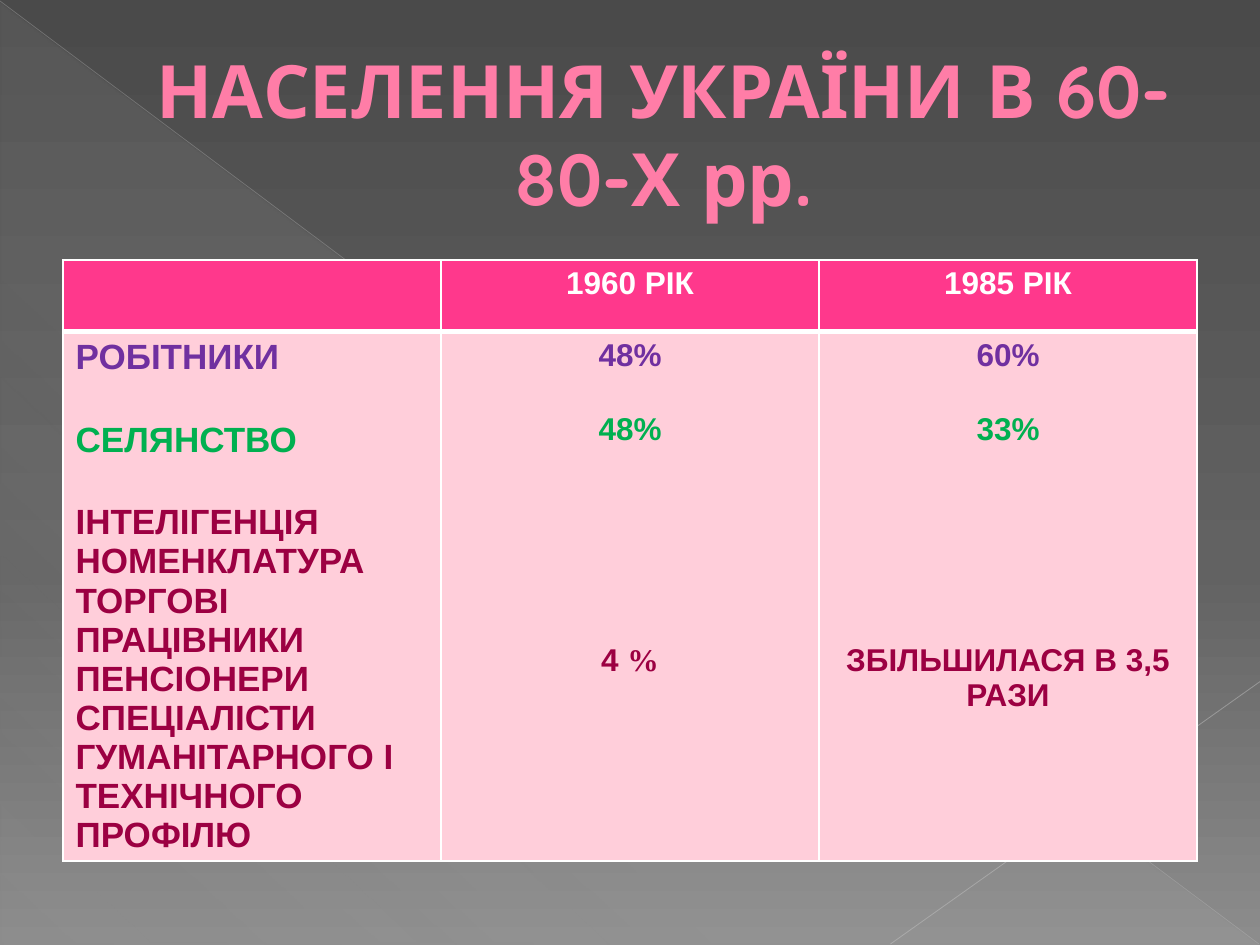
from lxml import etree
from pptx import Presentation
from pptx.dml.color import RGBColor
from pptx.enum.shapes import MSO_CONNECTOR, MSO_SHAPE
from pptx.enum.text import MSO_ANCHOR, PP_ALIGN
from pptx.oxml.ns import qn
from pptx.util import Cm, Pt

LEFT, CENTER = PP_ALIGN.LEFT, PP_ALIGN.CENTER
MIDDLE = MSO_ANCHOR.MIDDLE
STRAIGHT = MSO_CONNECTOR.STRAIGHT
RIGHT_TRIANGLE = MSO_SHAPE.RIGHT_TRIANGLE

WHITE = RGBColor(0xFF, 0xFF, 0xFF)
PINK = RGBColor(0xFF, 0x7D, 0xA7)
TITLE_EDGE = RGBColor(0xB1, 0x27, 0x61)
HEADER_PINK = RGBColor(0xFF, 0x38, 0x8C)
BODY_PINK = RGBColor(0xFF, 0xCE, 0xDA)
PURPLE = RGBColor(0x70, 0x30, 0xA0)
GREEN = RGBColor(0x00, 0xB0, 0x50)
CRIMSON = RGBColor(0x9C, 0x00, 0x42)
DARK_GREY = RGBColor(0x4A, 0x4A, 0x4A)
MID_GREY = RGBColor(0x62, 0x62, 0x62)
LIGHT_GREY = RGBColor(0x8C, 0x8C, 0x8C)
HAZE = RGBColor(0xD2, 0xD2, 0xD2)
LONG_LINE = RGBColor(0xBF, 0xBF, 0xBF)
SHORT_LINE = RGBColor(0xC6, 0xC6, 0xC6)


def add_color(parent, color, alpha=100):
    clr = etree.SubElement(parent, qn("a:srgbClr"), val=str(color))
    if alpha < 100:
        etree.SubElement(clr, qn("a:alpha"), val=str(alpha * 1000))


def set_gradient(props, stops, angle):
    """Swap the solid fill in props for a linear gradient."""
    grad = etree.Element(qn("a:gradFill"), rotWithShape="1")
    stop_list = etree.SubElement(grad, qn("a:gsLst"))
    for pos, color, alpha in stops:
        add_color(etree.SubElement(stop_list, qn("a:gs"), pos=str(pos * 1000)), color, alpha)
    etree.SubElement(grad, qn("a:lin"), ang=str(angle * 60000), scaled="0")
    solid = props.find(qn("a:solidFill"))
    props.replace(solid, grad)


prs = Presentation()
prs.slide_width, prs.slide_height = Cm(25.4), Cm(19.05)
s = prs.slides.add_slide(prs.slide_layouts[5])

# Background
s.background.fill.solid()
s.background.fill.fore_color.rgb = DARK_GREY
set_gradient(s.element.find(".//" + qn("p:bgPr")),
             [(0, DARK_GREY, 100), (60, MID_GREY, 100), (100, LIGHT_GREY, 100)], 90)

sp = s.shapes.add_shape(RIGHT_TRIANGLE, Cm(0.02), Cm(0.05), Cm(25.36), Cm(19))
sp.shadow.inherit = False
sp.line.fill.background()
sp.fill.solid()
set_gradient(sp.element.spPr, [(0, HAZE, 10), (70, HAZE, 8), (100, HAZE, 1)], 133)

for x1, y1, x2, y2, color, width, alpha in [
    (0, 0.02, 25.38, 19.03, LONG_LINE, 0.39, 35),
    (25.4, 13.74, 17.95, 19.03, SHORT_LINE, 0.47, 45),
]:
    line = s.shapes.add_connector(STRAIGHT, Cm(x1), Cm(y1), Cm(x2), Cm(y2))
    line.line.color.rgb = color
    line.line.width = Pt(width)
    clr = line.element.spPr.find(".//" + qn("a:srgbClr"))
    etree.SubElement(clr, qn("a:alpha"), val=str(alpha * 1000))
    etree.SubElement(line.element.spPr, qn("a:effectLst"))

# Title
title = s.shapes.title
title.element.getparent().append(title.element)
title.left, title.top, title.width, title.height = Cm(1.27), Cm(0.74), Cm(22.86), Cm(3.89)
tf = title.text_frame
tf.word_wrap = True
tf.vertical_anchor = MIDDLE
p = tf.paragraphs[0]
p.alignment = CENTER
p._p.get_or_add_pPr().set("marL", str(Cm(1.35)))
r = p.add_run()
r.text = "НАСЕЛЕННЯ УКРАЇНИ В 60-80-Х рр."
r.font.name, r.font.size, r.font.bold = "Quicksand", Pt(42), True
r.font.color.rgb = PINK
edge = etree.Element(qn("a:ln"), w=str(Pt(0.5)))
add_color(etree.SubElement(edge, qn("a:solidFill")), TITLE_EDGE)
r.font._element.insert(0, edge)

# Table: each cell lists (text, colour, space before in points)
rows = [
    [[], [("1960 РІК", WHITE, 0)], [("1985 РІК", WHITE, 0)]],
    [
        [("РОБІТНИКИ", PURPLE, 0), ("СЕЛЯНСТВО", GREEN, 25),
         ("ІНТЕЛІГЕНЦІЯ", CRIMSON, 25), ("НОМЕНКЛАТУРА", CRIMSON, 0),
         ("ТОРГОВІ ПРАЦІВНИКИ", CRIMSON, 0), ("ПЕНСІОНЕРИ", CRIMSON, 0),
         ("СПЕЦІАЛІСТИ ГУМАНІТАРНОГО І ТЕХНІЧНОГО ПРОФІЛЮ", CRIMSON, 0)],
        [("48%", PURPLE, 0), ("48%", GREEN, 22), ("4 %", CRIMSON, 112)],
        [("60%", PURPLE, 0), ("33%", GREEN, 22), ("ЗБІЛЬШИЛАСЯ В 3,5 РАЗИ", CRIMSON, 112)],
    ],
]
table = s.shapes.add_table(2, 3, Cm(1.27), Cm(5.24), Cm(22.86), Cm(12.12)).table
table.rows[0].height, table.rows[1].height = Cm(1.44), Cm(10.68)

for i, row in enumerate(rows):
    for j, lines in enumerate(row):
        cell = table.cell(i, j)
        cell.fill.solid()
        cell.fill.fore_color.rgb = BODY_PINK if i else HEADER_PINK
        widths = {"L": 1, "R": 1, "T": 3 if i else 1, "B": 1 if i else 3}
        for n, (side, width) in enumerate(widths.items()):
            border = etree.Element(qn("a:ln" + side), w=str(Pt(width)))
            add_color(etree.SubElement(border, qn("a:solidFill")), WHITE)
            cell._tc.get_or_add_tcPr().insert(n, border)
        tf = cell.text_frame
        for n, (text, color, space) in enumerate(lines):
            p = tf.add_paragraph() if n else tf.paragraphs[0]
            p.alignment = CENTER if j else LEFT
            p.space_before = Pt(space)
            p.font.name, p.font.bold = "Arial", True
            p.font.size = Pt(18 if j else 20)
            p.font.color.rgb = color
            number, percent, _ = text.partition(" %")
            p.add_run().text = number + percent[:1]
            if percent:
                r = p.add_run()
                r.text = "%"
                r.font.name = "Times New Roman"

prs.save("out.pptx")
